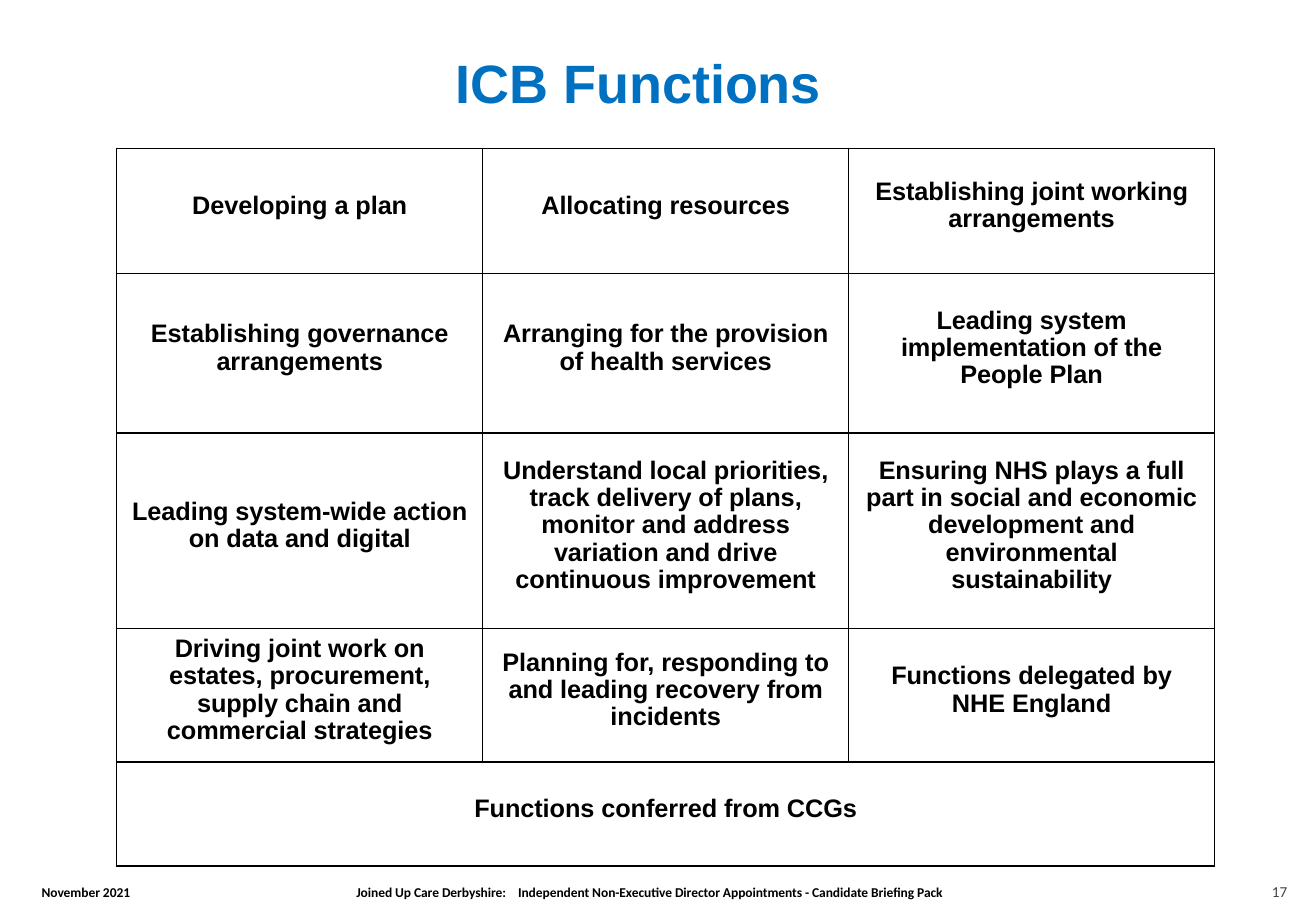
from lxml import etree
from pptx import Presentation
from pptx.dml.color import RGBColor
from pptx.enum.text import MSO_ANCHOR, PP_ALIGN
from pptx.oxml import parse_xml
from pptx.oxml.ns import nsdecls, qn
from pptx.util import Cm, Pt

MIDDLE = MSO_ANCHOR.MIDDLE
CENTER = PP_ALIGN.CENTER
BLUE = RGBColor(0x00, 0x70, 0xC0)
BLACK = RGBColor(0x00, 0x00, 0x00)
GREY = RGBColor(0x43, 0x43, 0x43)

TITLE_FORMAT = {"name": "Arial", "size": Pt(32), "bold": True, "color": BLUE}
CELL_FORMAT = {"name": "Arial", "size": Pt(15), "bold": True, "color": BLACK}
FOOTER_FORMAT = {"name": "Calibri", "size": Pt(8), "bold": True, "color": BLACK}
NUMBER_FORMAT = {"name": "Calibri", "size": Pt(9), "bold": False, "color": GREY}


def write(paragraph, text, text_format):
    """Fill a paragraph and apply its font, with slightly tightened letters."""
    paragraph.text = text
    for run in paragraph.runs:
        for name, value in text_format.items():
            if name == "color":
                run.font.color.rgb = value
            else:
                setattr(run.font, name, value)
        run._r.get_or_add_rPr().set("spc", "-5")


def add_border(cell):
    """Draw a thin black line on all four sides of a cell."""
    properties = cell._tc.get_or_add_tcPr()
    for index, side in enumerate(("lnL", "lnR", "lnT", "lnB")):
        properties.insert(index, parse_xml(
            f'<a:{side} {nsdecls("a")} w="12700"><a:solidFill>'
            f'<a:srgbClr val="{BLACK}"/></a:solidFill></a:{side}>'))


presentation = Presentation()
presentation.slide_width = Cm(27.51)
presentation.slide_height = Cm(19.05)
slide = presentation.slides.add_slide(presentation.slide_layouts[6])

# Title and footer: left, top, width, height, line spacing, text, format
TEXTS = [
    (9.53, 1.04, 7.8, 1.4, None, "ICB Functions", TITLE_FORMAT),
    (0.87, 18.52, 2.2, 0.36, Pt(8.6), "November 2021", FOOTER_FORMAT),
    (7.45, 18.52, 12.8, 0.36, Pt(8.6),
     "Joined Up Care Derbyshire:\tIndependent Non-Executive Director "
     "Appointments - Candidate Briefing Pack", FOOTER_FORMAT),
    (26.59, 18.49, 0.6, 0.38, Pt(9.6), "17", NUMBER_FORMAT),
]
for left, top, width, height, spacing, text, text_format in TEXTS:
    shape = slide.shapes.add_textbox(Cm(left), Cm(top), Cm(width), Cm(height))
    frame = shape.text_frame
    frame.word_wrap = True
    frame.margin_left = frame.margin_right = 0
    frame.margin_top = frame.margin_bottom = 0
    paragraph = frame.paragraphs[0]
    paragraph.line_spacing = spacing
    if "\t" in text:
        tabs = etree.SubElement(paragraph._p.get_or_add_pPr(), qn("a:tabLst"))
        etree.SubElement(tabs, qn("a:tab"), pos=str(Cm(3.38)), algn="l")
    write(paragraph, text, text_format)

# Table of functions, "\v" being a line break
FUNCTIONS = [
    ["Developing a plan", "Allocating resources",
     "Establishing joint working\varrangements"],
    ["Establishing governance\varrangements",
     "Arranging for the provision\vof health services",
     "Leading system\vimplementation of the\vPeople Plan"],
    ["Leading system-wide action\von data and digital",
     "Understand local priorities,\vtrack delivery of plans,\vmonitor and address"
     "\vvariation and drive\vcontinuous improvement",
     "Ensuring NHS plays a full\vpart in social and economic\vdevelopment and"
     "\venvironmental\vsustainability"],
    ["Driving joint work on\vestates, procurement,\vsupply chain and"
     "\vcommercial strategies",
     "Planning for, responding to\vand leading recovery from\vincidents",
     "Functions delegated by\vNHE England"],
    ["Functions conferred from CCGs"],
]
ROW_HEIGHTS = [2.62, 3.33, 4.09, 2.79, 2.18]
COLUMN_WIDTH = 7.65

table = slide.shapes.add_table(
    len(FUNCTIONS), 3, Cm(2.44), Cm(3.1),
    Cm(3 * COLUMN_WIDTH), Cm(sum(ROW_HEIGHTS))).table
table.first_row = False
table.horz_banding = False
for column in table.columns:
    column.width = Cm(COLUMN_WIDTH)
for row, height in zip(table.rows, ROW_HEIGHTS):
    row.height = Cm(height)
table.cell(4, 0).merge(table.cell(4, 2))

for cell in table.iter_cells():
    cell.fill.background()
    add_border(cell)
for row, texts in zip(table.rows, FUNCTIONS):
    for cell, text in zip(row.cells, texts):
        cell.vertical_anchor = MIDDLE
        cell.margin_left = cell.margin_right = cell.margin_top = 0
        cell.margin_bottom = Cm(0.2)
        paragraph = cell.text_frame.paragraphs[0]
        paragraph.alignment = CENTER
        paragraph.line_spacing = 0.97
        write(paragraph, text, CELL_FORMAT)

presentation.save("out.pptx")
